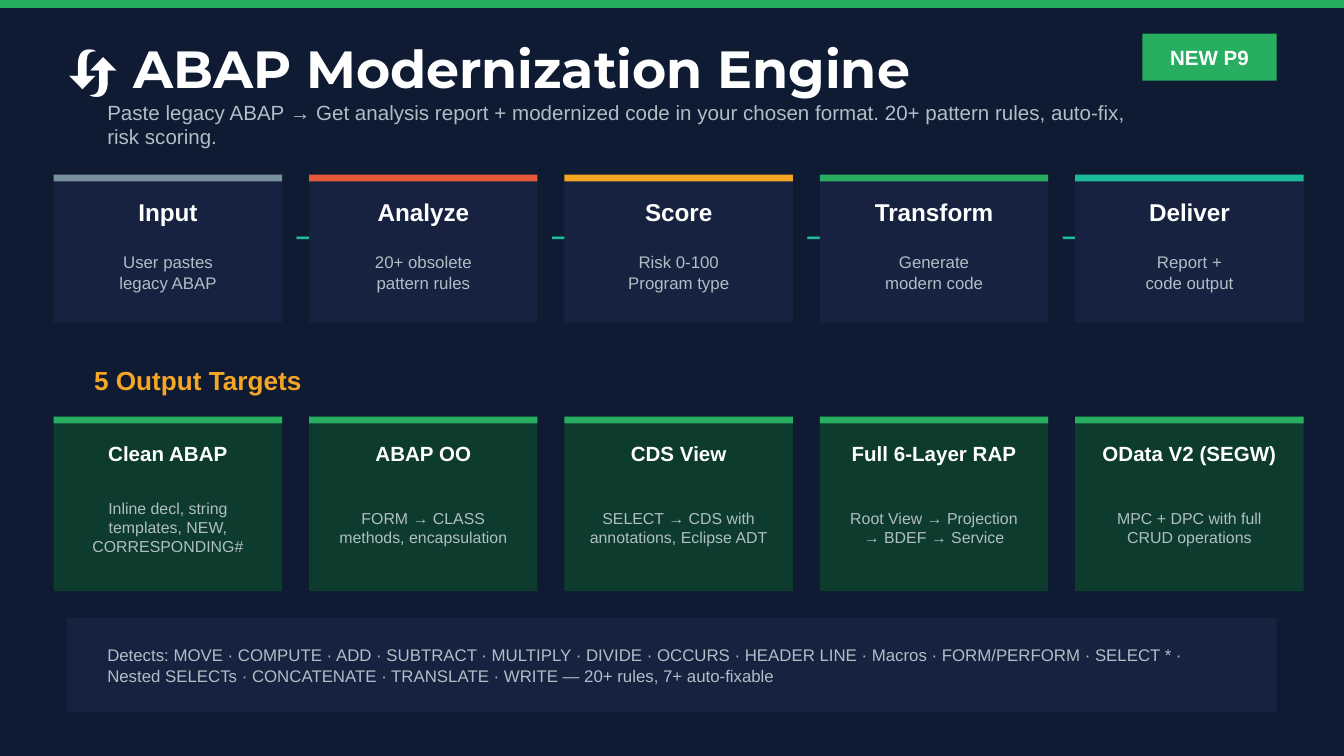
from pptx import Presentation
from pptx.dml.color import RGBColor
from pptx.enum.shapes import MSO_SHAPE
from pptx.enum.text import MSO_ANCHOR, MSO_AUTO_SIZE, PP_ALIGN
from pptx.util import Inches, Pt

RECT = MSO_SHAPE.RECTANGLE
MIDDLE = MSO_ANCHOR.MIDDLE
FIXED = MSO_AUTO_SIZE.NONE
LEFT, CENTER = PP_ALIGN.LEFT, PP_ALIGN.CENTER

# Grid: square cells, 100 columns across a 16:9 slide
WIDTH = 10
HEIGHT = WIDTH * 9 / 16
CELL = WIDTH / 100

NAVY, PANEL, FOREST = "0F1B33", "162240", "0D3B2E"
GREEN, TEAL, AMBER = "27AE60", "1ABC9C", "F5A623"
WHITE, GREY = "FFFFFF", "B0BEC5"

# Card row: left edge, card width and step, in columns
EDGE, CARD, STEP = 4, 17, 19

STAGES = [
    ("Input", "User pastes\nlegacy ABAP", "78909C"),
    ("Analyze", "20+ obsolete\npattern rules", "E8593C"),
    ("Score", "Risk 0-100\nProgram type", AMBER),
    ("Transform", "Generate\nmodern code", GREEN),
    ("Deliver", "Report +\ncode output", TEAL),
]
TARGETS = [
    ("Clean ABAP", "Inline decl, string templates, NEW, CORRESPONDING#"),
    ("ABAP OO", "FORM → CLASS methods, encapsulation"),
    ("CDS View", "SELECT → CDS with annotations, Eclipse ADT"),
    ("Full 6-Layer RAP", "Root View → Projection → BDEF → Service"),
    ("OData V2 (SEGW)", "MPC + DPC with full CRUD operations"),
]


def color(code):
    return RGBColor.from_string(code)


def cells(*sizes):
    return [Inches(size * CELL) for size in sizes]


class Deck:
    def __init__(self, slide, font="Arial"):
        self.slide = slide
        self.font = font
        fill = slide.background.fill
        fill.solid()
        fill.fore_color.rgb = color(NAVY)

    def block(self, box, fill):
        shape = self.slide.shapes.add_shape(RECT, *cells(*box))
        shape.shadow.inherit = False
        shape.fill.solid()
        shape.fill.fore_color.rgb = color(fill)
        shape.line.fill.background()

    def style(self, frame, text, size, tint, bold, align, font, flush):
        frame.word_wrap = True
        frame.auto_size = FIXED
        frame.vertical_anchor = MIDDLE
        if flush:
            frame.margin_left = frame.margin_right = 0
            frame.margin_top = frame.margin_bottom = 0
        frame.text = text
        for para in frame.paragraphs:
            para.alignment = align
            for run in para.runs:
                run.font.name = font or self.font
                run.font.size = Pt(size)
                run.font.bold = bold
                run.font.color.rgb = color(tint)

    def title(self, box, text, size, font):
        shape = self.slide.shapes.title
        shape.left, shape.top, shape.width, shape.height = cells(*box)
        self.style(shape.text_frame, text, size, WHITE, True, LEFT, font, True)

    def label(self, box, text, size, tint=GREY, bold=False, align=LEFT,
              font=None, flush=False):
        shape = self.slide.shapes.add_textbox(*cells(*box))
        self.style(shape.text_frame, text, size, tint, bold, align, font, flush)

    def card(self, left, top, high, fill, bar, head, note, sizes, inset=0):
        self.block((left, top, CARD, high), fill)
        self.block((left, top, CARD, 0.5), bar)
        x, wide = left + inset, CARD - 2 * inset
        self.label((x, top + 1, wide, 3.5), head, sizes[0], WHITE, True, CENTER)
        self.label((x, top + 4.5, wide, high - 5.5), note, sizes[1],
                   align=CENTER)


def main():
    show = Presentation()
    show.slide_width, show.slide_height = Inches(WIDTH), Inches(HEIGHT)
    deck = Deck(show.slides.add_slide(show.slide_layouts[5]))

    # Header
    deck.block((0, 0, 100, 0.6), GREEN)
    badge = (85, 2.5, 10, 3.5)
    deck.block(badge, GREEN)
    deck.label(badge, "NEW P9", 11, WHITE, True, CENTER)
    deck.title((5, 2, 75, 6), "🔄 ABAP Modernization Engine", 28, "Montserrat")
    deck.label((7, 7.5, 80, 3.5),
               "Paste legacy ABAP → Get analysis report + modernized code in "
               "your chosen format. 20+ pattern rules, auto-fix, risk scoring.",
               11)

    # Stages; each later card partly covers the arrow before it
    for i, (head, note, bar) in enumerate(STAGES):
        left = EDGE + i * STEP
        if i:
            deck.label((left - STEP + CARD, 15, 2.5, 5), "→", 18, TEAL,
                       align=CENTER, font="Calibri")
        deck.card(left, 13, 11, PANEL, bar, head, note, (13, 9))

    # Output targets
    deck.label((7, 26.5, 30, 3.5), "5 Output Targets", 14, AMBER, True,
               flush=True)
    for i, (head, note) in enumerate(TARGETS):
        deck.card(EDGE + i * STEP, 31, 13, FOREST, GREEN, head, note,
                  (11, 8.5), inset=0.8)

    # Footer
    deck.block((5, 46, 90, 7), PANEL)
    deck.label((7, 46, 86, 7),
               "Detects: MOVE · COMPUTE · ADD · SUBTRACT · MULTIPLY · DIVIDE · "
               "OCCURS · HEADER LINE · Macros · FORM/PERFORM · SELECT * · "
               "Nested SELECTs · CONCATENATE · TRANSLATE · WRITE — "
               "20+ rules, 7+ auto-fixable", 9)

    show.save("out.pptx")


if __name__ == "__main__":
    main()
